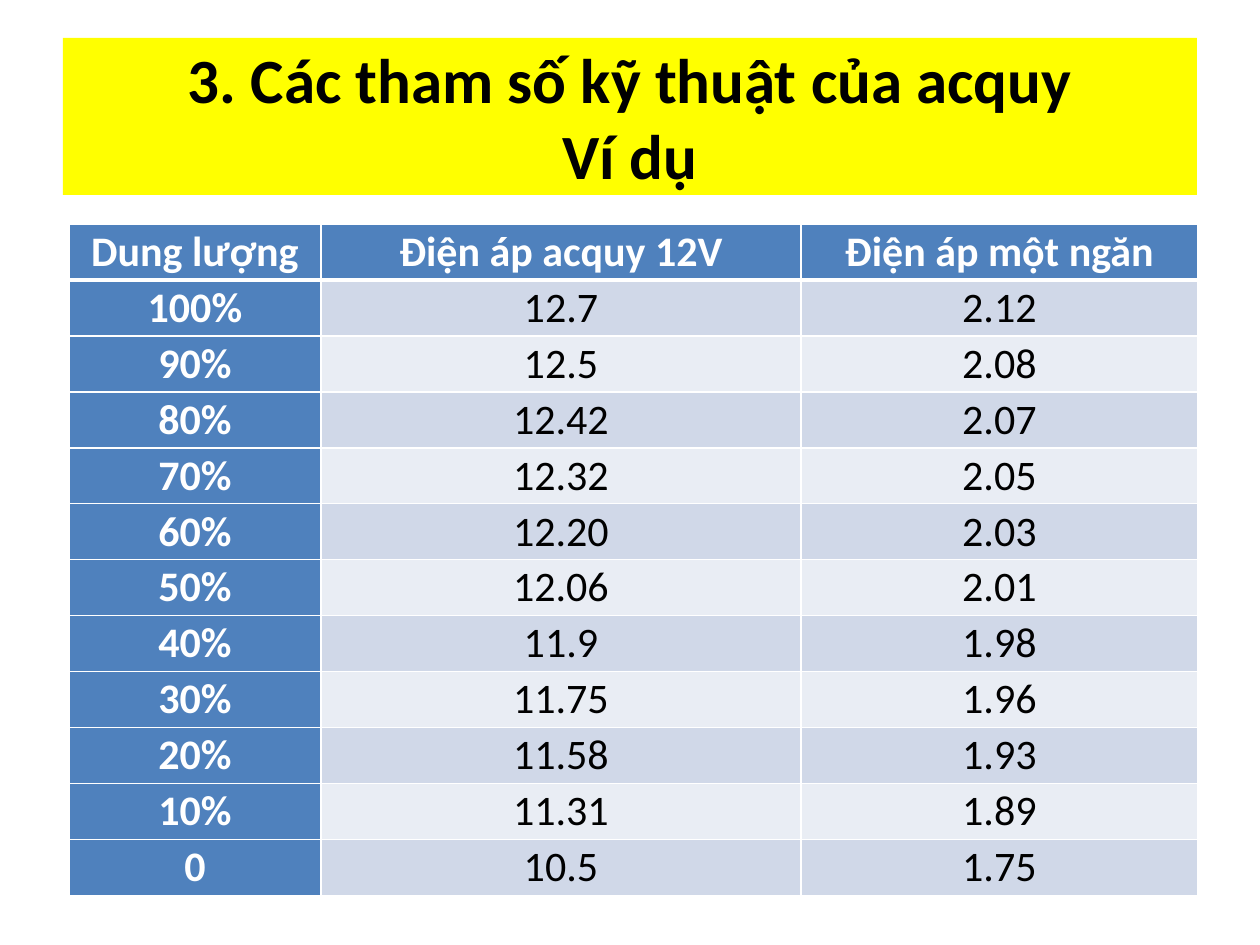
from dataclasses import dataclass

from lxml import etree
from pptx import Presentation
from pptx.dml.color import RGBColor
from pptx.enum.shapes import MSO_SHAPE
from pptx.enum.text import MSO_ANCHOR, PP_ALIGN
from pptx.oxml.ns import qn
from pptx.util import Pt

PX = 914400 // 126
RECTANGLE = MSO_SHAPE.RECTANGLE
MIDDLE = MSO_ANCHOR.MIDDLE
CENTER = PP_ALIGN.CENTER


@dataclass(frozen=True)
class Theme:
    font: str = "Calibri"
    title_size: int = 36
    cell_size: int = 24
    title_fill: str = "FFFF00"
    head_fill: str = "4F81BD"
    bands: tuple = ("E9EDF4", "D0D8E8")
    dark: str = "000000"
    light: str = "FFFFFF"


THEME = Theme()

HEADINGS = ("Dung lượng", "Điện áp acquy 12V", "Điện áp một ngăn")
READINGS = (
    ("100%", "12.7", "2.12"),
    ("90%", "12.5", "2.08"),
    ("80%", "12.42", "2.07"),
    ("70%", "12.32", "2.05"),
    ("60%", "12.20", "2.03"),
    ("50%", "12.06", "2.01"),
    ("40%", "11.9", "1.98"),
    ("30%", "11.75", "1.96"),
    ("20%", "11.58", "1.93"),
    ("10%", "11.31", "1.89"),
    ("0", "10.5", "1.75"),
)
ROWS = (HEADINGS, *READINGS)
COLUMN_WIDTHS = (252, 480, 397)
ROW_HEIGHT = 56


def add_run(para, text, size, color, bold):
    span = para.add_run()
    span.text = text
    span.font.name = THEME.font
    span.font.size = Pt(size)
    span.font.bold = bold
    span.font.color.rgb = RGBColor.from_string(color)


def set_border(cell, side, points):
    """Draw one side of a cell; side is L, R, T or B. Call before filling."""
    properties = cell._tc.get_or_add_tcPr()
    line = etree.SubElement(properties, qn(f"a:ln{side}"), w=str(Pt(points)))
    fill = etree.SubElement(line, qn("a:solidFill"))
    etree.SubElement(fill, qn("a:srgbClr"), val=THEME.light)


deck = Presentation()
deck.slide_width = 1260 * PX
deck.slide_height = 945 * PX
page = deck.slides.add_slide(deck.slide_layouts[6])

# Voltage table
table = page.shapes.add_table(
    len(ROWS), len(HEADINGS), 69 * PX, 224 * PX,
    sum(COLUMN_WIDTHS) * PX, len(ROWS) * ROW_HEIGHT * PX,
).table
for column, width in zip(table.columns, COLUMN_WIDTHS):
    column.width = width * PX

for row_index, texts in enumerate(ROWS):
    table.rows[row_index].height = ROW_HEIGHT * PX
    for column_index, text in enumerate(texts):
        cell = table.cell(row_index, column_index)
        is_head = row_index == 0 or column_index == 0
        cell.margin_left = cell.margin_right = 0
        cell.margin_top = cell.margin_bottom = 0
        cell.vertical_anchor = MIDDLE

        set_border(cell, "L", 1)
        set_border(cell, "R", 1)
        set_border(cell, "T", 3 if row_index == 1 else 1)
        set_border(cell, "B", 3 if row_index == 0 else 1)
        cell.fill.solid()
        color = THEME.head_fill if is_head else THEME.bands[row_index % 2]
        cell.fill.fore_color.rgb = RGBColor.from_string(color)

        para = cell.text_frame.paragraphs[0]
        para.alignment = CENTER
        para.space_before = Pt(6)
        add_run(para, text, THEME.cell_size,
                THEME.light if is_head else THEME.dark, is_head)

# Title band
title = page.shapes.add_shape(RECTANGLE, 63 * PX, 38 * PX, 1134 * PX, 157 * PX)
title.shadow.inherit = False
title.fill.solid()
title.fill.fore_color.rgb = RGBColor.from_string(THEME.title_fill)
title.line.fill.background()
title.text_frame.word_wrap = True
title.text_frame.vertical_anchor = MIDDLE
para = title.text_frame.paragraphs[0]
para.alignment = CENTER
add_run(para, "3. Các tham số kỹ thuật của acquy", THEME.title_size, THEME.dark, True)
para.add_line_break()
add_run(para, "Ví dụ", THEME.title_size, THEME.dark, True)

deck.save("out.pptx")
